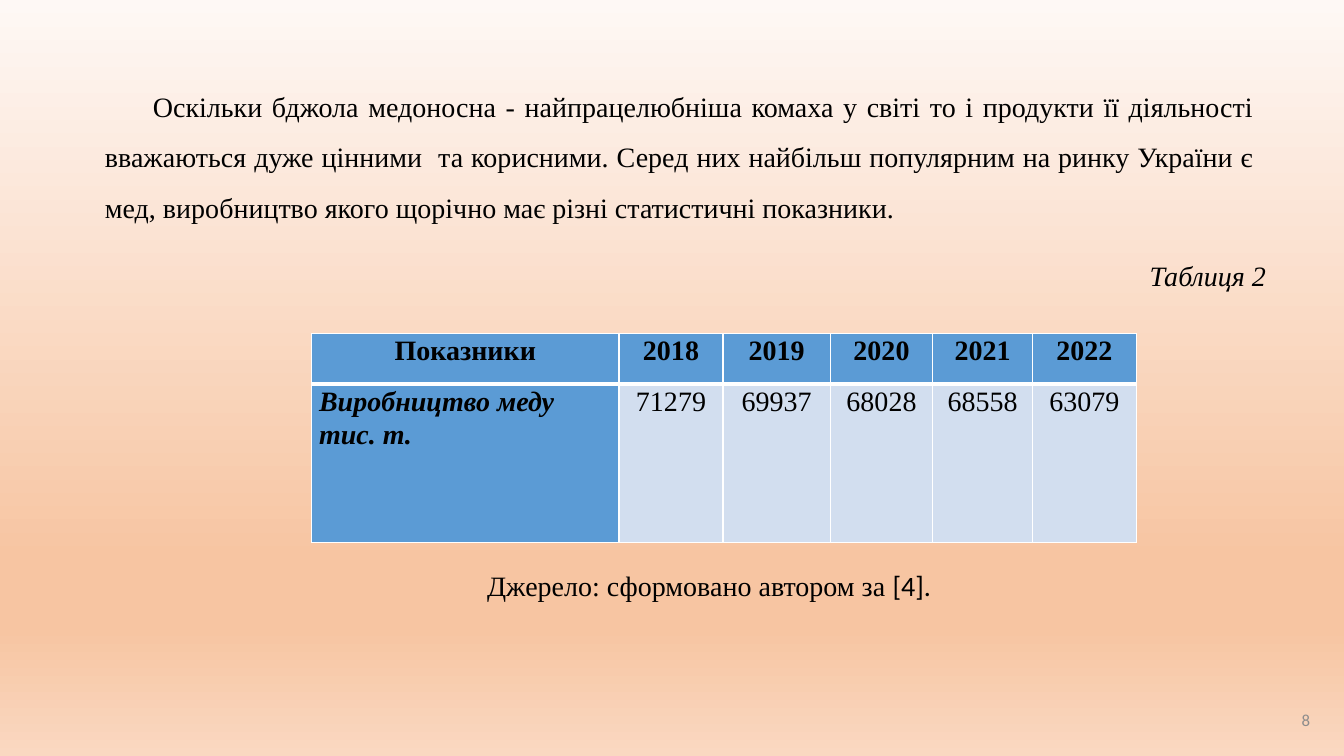
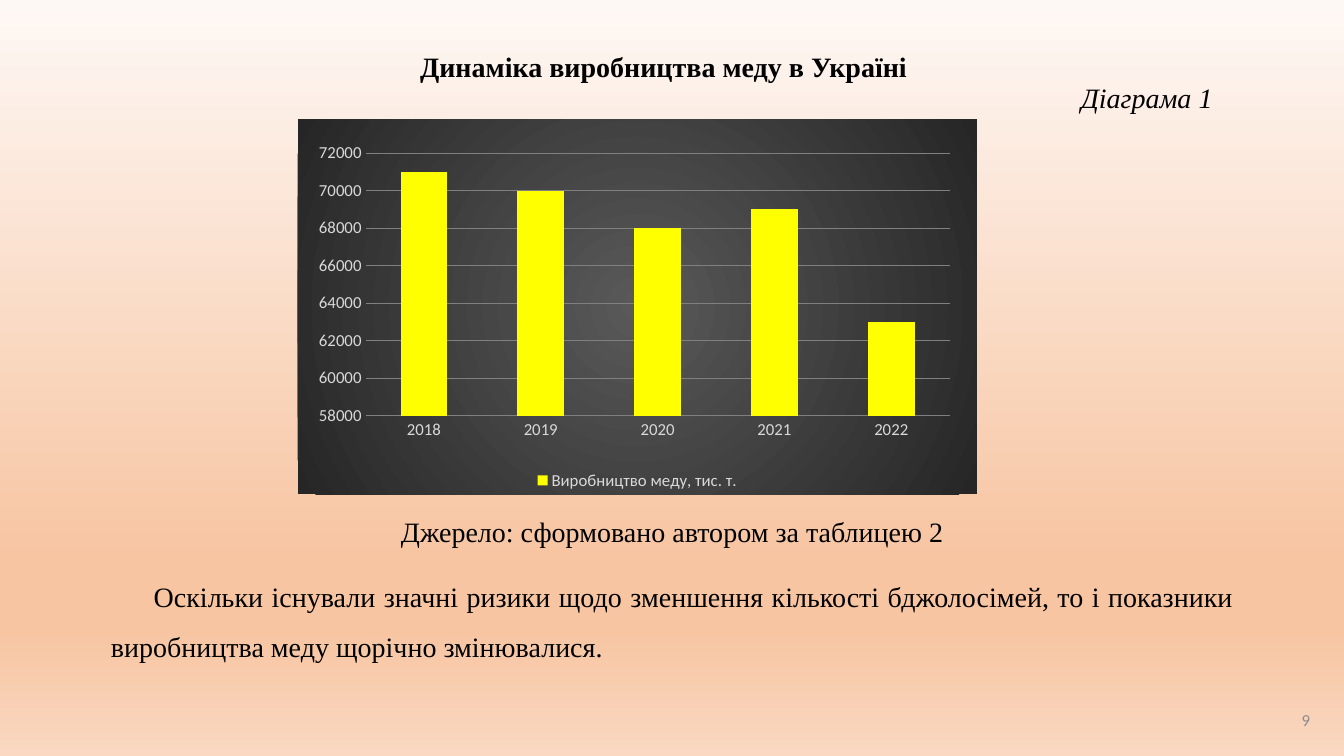
import pptx
import pptx.chart.data
import pptx.dml.color
import pptx.enum.chart
import pptx.enum.text
import pptx.oxml
import pptx.oxml.ns
import pptx.util

Cm = pptx.util.Cm
Pt = pptx.util.Pt
RGB = pptx.dml.color.RGBColor.from_string
Align = pptx.enum.text.PP_ALIGN
Anchor = pptx.enum.text.MSO_ANCHOR
qn = pptx.oxml.ns.qn
nsdecls = pptx.oxml.ns.nsdecls


class Theme:
    serif, sans = "Times New Roman", "Calibri"
    text, number, border = "000000", "8C8C8C", "FFFFFF"
    header, cell = "5B9BD5", "D2DEEF"
    bar, grid, chart_text = "FFFF00", "808080", "D9D9D9"
    background = [(0, "FEF8F5"), (74, "F7C5A2"), (83, "F7C5A2"), (100, "FAD8C1")]
    chart_background = [(0, "595959"), (100, "262626")]
    body_size, small_size = Pt(20), Pt(12)


def gradient(stops, direction):
    """Return a gradFill element from (percent, colour) stops and a direction element."""
    stop_xml = "".join(
        f'<a:gs pos="{percent * 1000}"><a:srgbClr val="{colour}"/></a:gs>'
        for percent, colour in stops
    )
    return pptx.oxml.parse_xml(
        f'<a:gradFill {nsdecls("a")} rotWithShape="1">'
        f"<a:gsLst>{stop_xml}</a:gsLst>{direction}</a:gradFill>"
    )


def add_text(frame, text, align, spacing=1.0, before=Pt(0), margin=Cm(0), indent=Cm(0),
             bold=False, italic=False, font=Theme.serif, size=Theme.body_size,
             colour=Theme.text):
    """Write a paragraph into the frame, filling its empty first one if there is one."""
    para = frame.paragraphs[-1]
    if para.runs:
        para = frame.add_paragraph()
    para.alignment, para.line_spacing, para.space_before = align, spacing, before
    properties = para._p.get_or_add_pPr()
    properties.set("marL", str(int(margin)))
    properties.set("indent", str(int(indent)))
    spans = [(text, font)] if isinstance(text, str) else text
    for words, name in spans:
        span = para.add_run()
        span.text = words
        span.font.name, span.font.size = name, size
        span.font.bold, span.font.italic = bold, italic
        span.font.color.rgb = RGB(colour)


years = ["2018", "2019", "2020", "2021", "2022"]
honey_output = [71279, 69937, 68028, 68558, 63079]
rounded_output = [round(value, -3) for value in honey_output]

deck = pptx.Presentation()
deck.slide_width, deck.slide_height = Cm(33.87), Cm(19.05)

# Shared background
deck.slide_master.background.fill.solid()
solid = deck.slide_master.element.find(".//" + qn("p:bgPr")).find(qn("a:solidFill"))
solid.getparent().replace(
    solid, gradient(Theme.background, '<a:lin ang="5400000" scaled="0"/>')
)

# Slides with placed placeholders and page numbers
placements = [
    (8, (2.39, 0.84, 29.46, 4.93), (2.01, 5.26, 30.15, 11.38)),
    (9, (2.08, 0.94, 29.29, 2.08), (2.54, 12.93, 28.8, 4.24)),
]
slides = []
for page_number, title_place, body_place in placements:
    slide = deck.slides.add_slide(deck.slide_layouts[0])
    title, body = slide.shapes.title, slide.placeholders[1]
    for holder, place, anchor in [(title, title_place, Anchor.BOTTOM),
                                  (body, body_place, Anchor.TOP)]:
        holder.left, holder.top, holder.width, holder.height = map(Cm, place)
        holder.text_frame.vertical_anchor = anchor
        holder.text_frame.auto_size = pptx.enum.text.MSO_AUTO_SIZE.NONE
        holder.text_frame.word_wrap = True
    number_box = slide.shapes.add_textbox(Cm(31.75), Cm(17.6), Cm(1.52), Cm(1.09))
    number_frame = number_box.text_frame
    number_frame.word_wrap = True
    number_frame.vertical_anchor = Anchor.MIDDLE
    add_text(number_frame, str(page_number), Align.RIGHT, font=Theme.sans,
             size=Theme.small_size, colour=Theme.number)
    slides.append((slide, title.text_frame, body.text_frame))

# Honey production table
slide, title_frame, body_frame = slides[0]
add_text(
    title_frame,
    "Оскільки бджола медоносна - найпрацелюбніша комаха у світі то і продукти її "
    "діяльності вважаються дуже цінними  та корисними. Серед них найбільш популярним "
    "на ринку України є мед, виробництво якого щорічно має різні статистичні показники.",
    Align.JUSTIFY, spacing=1.5, indent=Cm(1.21),
)
body_frame.margin_top = Cm(1.35)
add_text(body_frame, "Таблиця 2", Align.RIGHT, spacing=0.9, italic=True)
add_text(
    body_frame,
    [("Джерело: сформовано автором за ", Theme.serif), ("[4].", Theme.sans)],
    Align.CENTER, spacing=0.9, before=Pt(199.5), margin=Cm(1.57),
)

rows = [
    ["Показники"] + years,
    ["Виробництво меду тис. т."] + [str(value) for value in honey_output],
]
table = slide.shapes.add_table(
    len(rows), len(rows[0]), Cm(7.85), Cm(8.41), Cm(20.78), Cm(5.25)
).table
for column, width in zip(table.columns, [7.75, 2.62, 2.7, 2.59, 2.51, 2.62]):
    column.width = Cm(width)
for row, height in zip(table.rows, [1.27, 3.98]):
    row.height = Cm(height)
for row_index, row in enumerate(rows):
    for column_index, text in enumerate(row):
        cell = table.cell(row_index, column_index)
        is_header = row_index == 0
        is_label = column_index == 0
        cell.margin_left = cell.margin_right = Cm(0.19)
        cell.margin_top = cell.margin_bottom = Cm(0)
        for side in "LRTB":
            thick = is_header and side == "B"
            cell._tc.get_or_add_tcPr().append(pptx.oxml.parse_xml(
                f'<a:ln{side} {nsdecls("a")} w="{int(Pt(3 if thick else 1))}">'
                f'<a:solidFill><a:srgbClr val="{Theme.border}"/></a:solidFill></a:ln{side}>'
            ))
        cell.fill.solid()
        cell.fill.fore_color.rgb = RGB(Theme.header if is_header or is_label else Theme.cell)
        add_text(
            cell.text_frame, text,
            Align.LEFT if is_label and not is_header else Align.CENTER,
            spacing=1.07, bold=is_header or is_label, italic=is_label and not is_header,
        )

# Honey production chart
slide, title_frame, body_frame = slides[1]
title_frame.margin_left = title_frame.margin_right = Cm(0.81)
add_text(title_frame, "Динаміка виробництва меду в Україні", Align.CENTER, bold=True)
add_text(title_frame, "Діаграма 1", Align.RIGHT, spacing=0.94, italic=True)
add_text(body_frame, "Джерело: сформовано автором за таблицею 2", Align.CENTER, spacing=0.9)
add_text(
    body_frame,
    "Оскільки існували значні ризики щодо зменшення кількості бджолосімей, то і "
    "показники виробництва меду щорічно змінювалися.",
    Align.JUSTIFY, spacing=1.5, before=Pt(10), indent=Cm(1.08),
)

chart_data = pptx.chart.data.CategoryChartData()
chart_data.categories = years
chart_data.add_series("Виробництво меду, тис. т.", rounded_output)
chart = slide.shapes.add_chart(
    pptx.enum.chart.XL_CHART_TYPE.COLUMN_STACKED,
    Cm(7.5), Cm(3.01), Cm(17.12), Cm(9.45), chart_data,
).chart
chart.has_title = False
chart.font.name, chart.font.size = Theme.sans, Theme.small_size
chart.font.color.rgb = RGB(Theme.chart_text)
chart.has_legend = True
chart.legend.position = pptx.enum.chart.XL_LEGEND_POSITION.BOTTOM
chart.legend.include_in_layout = False

plot = chart.plots[0]
plot.gap_width, plot.overlap = 150, 100
plot.vary_by_categories = False
bars = plot.series[0].format.fill
bars.solid()
bars.fore_color.rgb = RGB(Theme.bar)

for axis in (chart.category_axis, chart.value_axis):
    axis.major_tick_mark = axis.minor_tick_mark = pptx.enum.chart.XL_TICK_MARK.NONE
    axis.format.line.fill.background()
value_axis = chart.value_axis
value_axis.minimum_scale, value_axis.maximum_scale = 58000, 72000
value_axis.major_unit = 2000
value_axis.has_major_gridlines = True
grid_line = value_axis.major_gridlines.format.line
grid_line.color.rgb = RGB(Theme.grid)
grid_line.width = Pt(0.75)

chart_part = chart._chartSpace.find(qn("c:chart"))
plot_area = chart_part.find(qn("c:plotArea"))
for layout in plot_area.findall(qn("c:layout")):
    plot_area.remove(layout)
plot_area.insert(0, pptx.oxml.parse_xml(
    f'<c:layout {nsdecls("c")}><c:manualLayout><c:layoutTarget val="inner"/>'
    '<c:xMode val="edge"/><c:yMode val="edge"/><c:x val="0.1"/><c:y val="0.09"/>'
    '<c:w val="0.86"/><c:h val="0.7"/></c:manualLayout></c:layout>'
))
chart_format = pptx.oxml.parse_xml(
    f'<c:spPr {nsdecls("c", "a")}><a:ln><a:noFill/></a:ln></c:spPr>'
)
chart_format.insert(0, gradient(
    Theme.chart_background,
    '<a:path path="circle"><a:fillToRect l="50000" t="50000" r="50000" b="50000"/></a:path>',
))
chart_part.addnext(chart_format)

deck.save("out.pptx")
